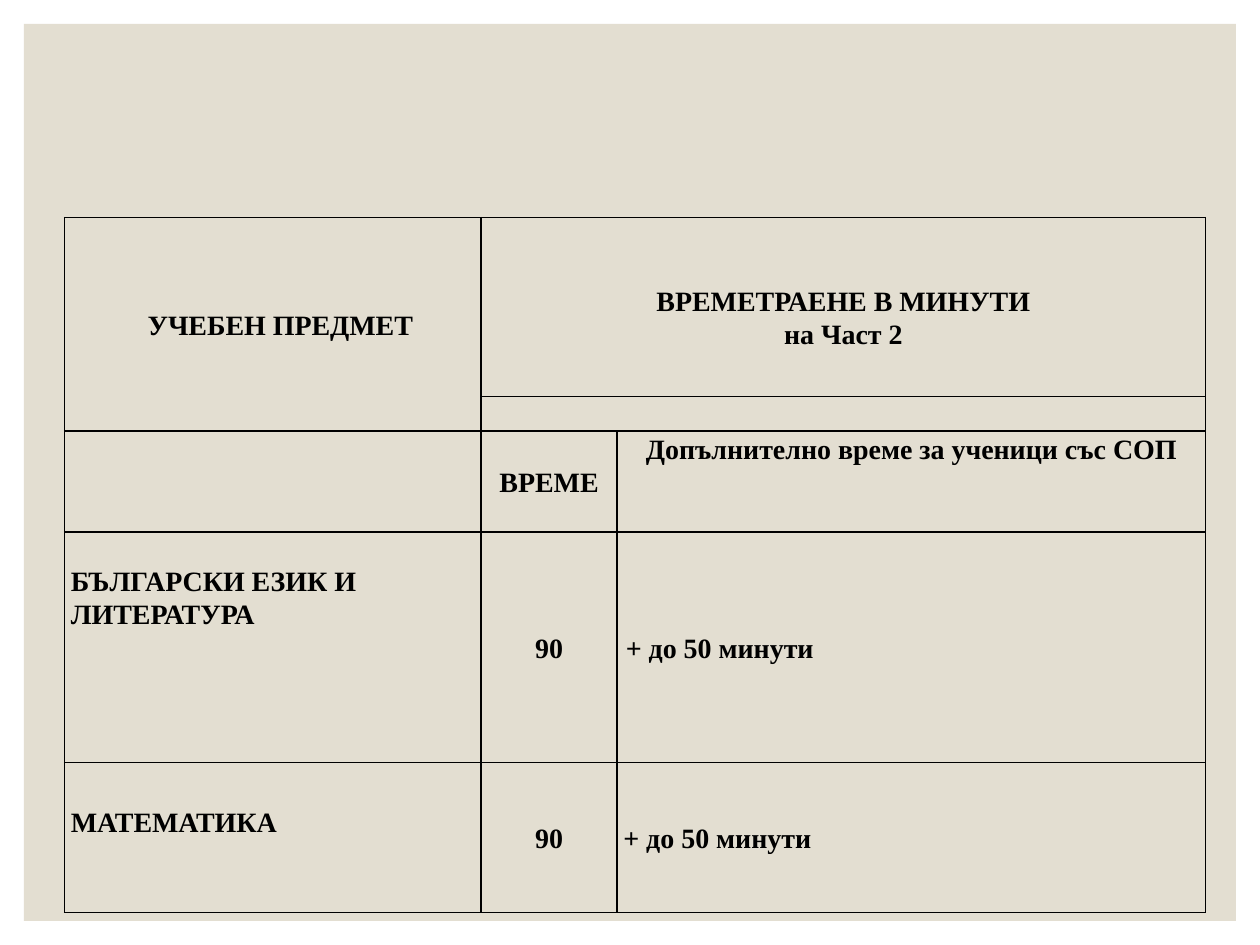
from lxml.etree import SubElement
from pptx import Presentation
from pptx.dml.color import RGBColor
from pptx.enum.shapes import MSO_SHAPE
from pptx.enum.text import MSO_ANCHOR, PP_ALIGN
from pptx.oxml import parse_xml
from pptx.oxml.ns import nsdecls, qn
from pptx.util import Pt

BLACK = RGBColor(0, 0, 0)
SAND = RGBColor(0xE3, 0xDE, 0xD1)
FONT = "Times New Roman"
SIZE = 16
WIDE, HIGH, EDGE = 720, 540, 13.7

LEFT, TOP = 36.9, 124.3
COLS = [238, 77.7, 336.4]
ROWS = [102.2, 19, 57.7, 131.8, 85.9]
MERGES = [((0, 0), (1, 0)), ((0, 1), (0, 2)), ((1, 1), (1, 2))]

# (row, column): text and the format that differs from centred and middle
CELLS = {
    (0, 0): ("УЧЕБЕН ПРЕДМЕТ", {"left": 12.2}),
    (0, 1): ("ВРЕМЕТРАЕНЕ В МИНУТИ\nна Част 2", {"top": 12}),
    (2, 1): ("ВРЕМЕ", {}),
    (2, 2): ("Допълнително време за ученици със СОП", {"anchor": MSO_ANCHOR.TOP}),
    (3, 0): ("БЪЛГАРСКИ ЕЗИК И ЛИТЕРАТУРА", {"align": PP_ALIGN.LEFT, "bottom": 57}),
    (3, 1): ("90", {}),
    (3, 2): ("+ до 50 минути", {"align": PP_ALIGN.LEFT, "left": 5}),
    (4, 0): ("МАТЕМАТИКА", {"align": PP_ALIGN.LEFT, "bottom": 19}),
    (4, 1): ("90", {}),
    (4, 2): ("+ до 50 минути", {"align": PP_ALIGN.LEFT}),
}


def put(cell, text, align=PP_ALIGN.CENTER, anchor=MSO_ANCHOR.MIDDLE,
        left=3.6, top=0.7, bottom=0):
    cell.margin_left, cell.margin_right = Pt(left), Pt(3.6)
    cell.margin_top, cell.margin_bottom = Pt(top), Pt(bottom)
    cell.vertical_anchor = anchor
    cell.text = text
    for para in cell.text_frame.paragraphs:
        para.alignment = align
        para.line_spacing = 1.07
        for run in para.runs:
            font = run.font
            font.name, font.size, font.bold = FONT, Pt(SIZE), True
            font.color.rgb = BLACK
        if not para.runs:
            # An empty cell must not stretch its row
            SubElement(para._p, qn("a:endParaRPr"), sz="1200")


def frame(cell):
    """Clear the fill and rule all four sides."""
    cell.fill.background()
    props = cell._tc.get_or_add_tcPr()
    for spot, side in enumerate("LRTB"):
        props.insert(spot, parse_xml(
            f'<a:ln{side} {nsdecls("a")} w="{Pt(1)}"><a:solidFill>'
            f'<a:srgbClr val="{BLACK}"/></a:solidFill></a:ln{side}>'))


def main():
    deck = Presentation()
    deck.slide_width, deck.slide_height = Pt(WIDE), Pt(HIGH)
    slide = deck.slides.add_slide(deck.slide_layouts[6])

    panel = slide.shapes.add_shape(
        MSO_SHAPE.RECTANGLE, Pt(EDGE), Pt(EDGE),
        Pt(WIDE - 2 * EDGE), Pt(HIGH - 2 * EDGE))
    panel.shadow.inherit = False
    panel.fill.solid()
    panel.fill.fore_color.rgb = SAND
    panel.line.fill.background()

    table = slide.shapes.add_table(
        len(ROWS), len(COLS), Pt(LEFT), Pt(TOP),
        Pt(sum(COLS)), Pt(sum(ROWS))).table
    table.first_row = table.horz_banding = False
    for col, width in zip(table.columns, COLS):
        col.width = Pt(width)
    for row, height in zip(table.rows, ROWS):
        row.height = Pt(height)
    for start, end in MERGES:
        table.cell(*start).merge(table.cell(*end))
    for r in range(len(ROWS)):
        for c in range(len(COLS)):
            cell = table.cell(r, c)
            text, look = CELLS.get((r, c), ("", {}))
            put(cell, text, **look)
            frame(cell)

    deck.save("out.pptx")


if __name__ == "__main__":
    main()
